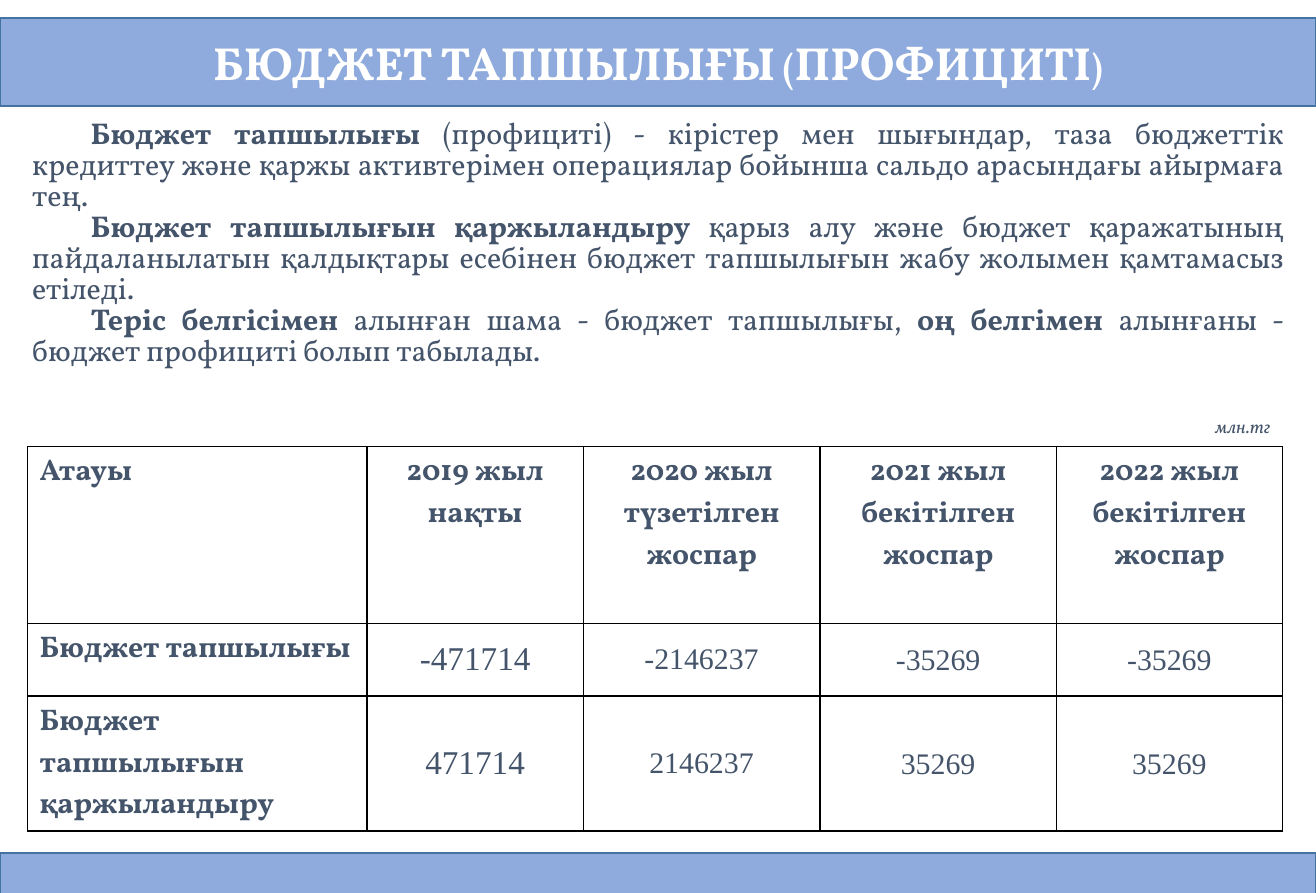
from dataclasses import dataclass

from lxml.etree import SubElement
from pptx import Presentation
from pptx.dml.color import RGBColor
from pptx.enum.shapes import MSO_SHAPE as SHAPE
from pptx.enum.text import MSO_ANCHOR as ANCHOR, PP_ALIGN as ALIGN
from pptx.oxml.ns import qn
from pptx.util import Emu, Inches, Pt


@dataclass(frozen=True)
class Theme:
    """Colours, fonts and type sizes of the slide."""
    band: str = "8FAADC"
    band_line: str = "43739E"
    ink: str = "44546A"
    white: str = "FFFFFF"
    border: str = "000000"
    serif: str = "Vollkorn"
    figures: str = "Times New Roman"
    title: float = 28
    body: float = 18.1
    cell: float = 18
    large: float = 20
    unit: float = 11


T = Theme()
WIDTH, HEIGHT = Inches(11.02), Inches(7.48)

TITLE = "БЮДЖЕТ ТАПШЫЛЫҒЫ (ПРОФИЦИТІ)"
DEFINITIONS = [
    [("Бюджет тапшылығы ", True),
     ("(профициті) - кірістер мен шығындар, таза бюджеттік кредиттеу және қаржы "
      "активтерімен операциялар бойынша сальдо арасындағы айырмаға тең.", False)],
    [("Бюджет тапшылығын қаржыландыру ", True),
     ("қарыз алу және бюджет қаражатының пайдаланылатын қалдықтары есебінен "
      "бюджет тапшылығын жабу жолымен қамтамасыз етіледі.", False)],
    [("Теріс белгісімен ", True),
     ("алынған шама - бюджет тапшылығы, ", False),
     ("оң белгімен ", True),
     ("алынғаны - бюджет профициті болып табылады.", False)],
]
HEADER = [["Атауы"], ["2019 жыл", "нақты"], ["2020 жыл", "түзетілген жоспар"],
          ["2021 жыл", "бекітілген жоспар"], ["2022 жыл", "бекітілген жоспар"]]
ROWS = [
    ("Бюджет тапшылығы", ["-471714", "-2146237", "-35269", "-35269"]),
    ("Бюджет тапшылығын қаржыландыру", ["471714", "2146237", "35269", "35269"]),
]
COL_WEIGHTS = [2.84, 1.81, 1.98, 1.98, 1.89]
ROW_WEIGHTS = [1.48, 0.61, 1.13]


def area(x, y, w, h):
    """Turn percentages of the slide into a box."""
    return [Emu(round(share * side / 100))
            for share, side in ((x, WIDTH), (y, HEIGHT), (w, WIDTH), (h, HEIGHT))]


def write(tf, paragraphs, size=T.cell, font=T.serif, color=T.ink, bold=False,
          italic=False, small_caps=False, align=ALIGN.LEFT, indent=0, spacing=None):
    """Fill a text frame with paragraphs given as strings or (text, bold) runs."""
    tf.word_wrap = True
    for i, runs in enumerate(paragraphs):
        p = tf.add_paragraph() if i else tf.paragraphs[0]
        p.alignment = align
        if spacing:
            p.line_spacing = spacing
        if indent:
            p._p.get_or_add_pPr().set("indent", str(Inches(indent)))
        for text, strong in [(runs, bold)] if isinstance(runs, str) else runs:
            r = p.add_run()
            r.text = text
            f = r.font
            f.name, f.size, f.bold, f.italic = font, Pt(size), strong, italic
            f.color.rgb = RGBColor.from_string(color)
            if small_caps:
                r._r.get_or_add_rPr().set("cap", "small")


def add_band(s, box, title=None):
    """Draw a full-width band with an optional title."""
    sp = s.shapes.add_shape(SHAPE.FLOWCHART_PROCESS, *box)
    sp.shadow.inherit = False
    sp.fill.solid()
    sp.fill.fore_color.rgb = RGBColor.from_string(T.band)
    sp.line.color.rgb = RGBColor.from_string(T.band_line)
    sp.line.width = Pt(1)
    if title:
        sp.text_frame.vertical_anchor = ANCHOR.MIDDLE
        write(sp.text_frame, [title], size=T.title, color=T.white, bold=True,
              small_caps=True, align=ALIGN.CENTER)


def add_text(s, box, paragraphs, **fmt):
    """Place a text box."""
    write(s.shapes.add_textbox(*box).text_frame, paragraphs, **fmt)


def style_cell(cell):
    """Clear the fill of a cell and draw its four borders."""
    tc_pr = cell._tc.get_or_add_tcPr()
    for side in ("lnL", "lnR", "lnT", "lnB"):
        ln = SubElement(tc_pr, qn(f"a:{side}"), w=str(Pt(1)))
        SubElement(SubElement(ln, qn("a:solidFill")), qn("a:srgbClr"), val=T.border)
    cell.fill.background()


def add_budget_table(s, box):
    """Place the table of deficit and financing by year."""
    x, y, w, h = box
    table = s.shapes.add_table(len(ROW_WEIGHTS), len(COL_WEIGHTS), x, y, w, h).table
    for column, weight in zip(table.columns, COL_WEIGHTS):
        column.width = Emu(round(w * weight / sum(COL_WEIGHTS)))
    for row, weight in zip(table.rows, ROW_WEIGHTS):
        row.height = Emu(round(h * weight / sum(ROW_WEIGHTS)))
    for cell in table.iter_cells():
        style_cell(cell)
    for c, lines in enumerate(HEADER):
        write(table.cell(0, c).text_frame, lines, bold=True,
              align=ALIGN.CENTER if c else ALIGN.LEFT)
    for r, (label, values) in enumerate(ROWS, 1):
        write(table.cell(r, 0).text_frame, [label], bold=True)
        for c, value in enumerate(values, 1):
            cell = table.cell(r, c)
            cell.vertical_anchor = ANCHOR.MIDDLE
            planned = c > 2
            if planned:
                cell.margin_left = cell.margin_right = Inches(0.07)
                cell.margin_top = cell.margin_bottom = 0
            write(cell.text_frame, [value], font=T.figures, align=ALIGN.CENTER,
                  size=T.large if c == 1 else T.cell, spacing=1.07 if planned else None)


def build_budget_slide(prs):
    """Compose the budget deficit slide."""
    s = prs.slides.add_slide(prs.slide_layouts[6])
    add_band(s, area(0, 2, 100, 9.9), TITLE)
    add_band(s, area(0, 95.55, 100, 4.5))
    add_text(s, area(1.55, 12.7, 96.9, 91), DEFINITIONS, size=T.body,
             align=ALIGN.JUSTIFY, indent=0.49, spacing=0.86)
    add_budget_table(s, area(2.1, 50, 95.35, 43.05))
    add_text(s, area(88.75, 45.85, 8.7, 3.9), ["млн.тг"], size=T.unit,
             italic=True, align=ALIGN.RIGHT)


def main():
    """Build and save the presentation."""
    prs = Presentation()
    prs.slide_width, prs.slide_height = WIDTH, HEIGHT
    build_budget_slide(prs)
    prs.save("out.pptx")


if __name__ == "__main__":
    main()
